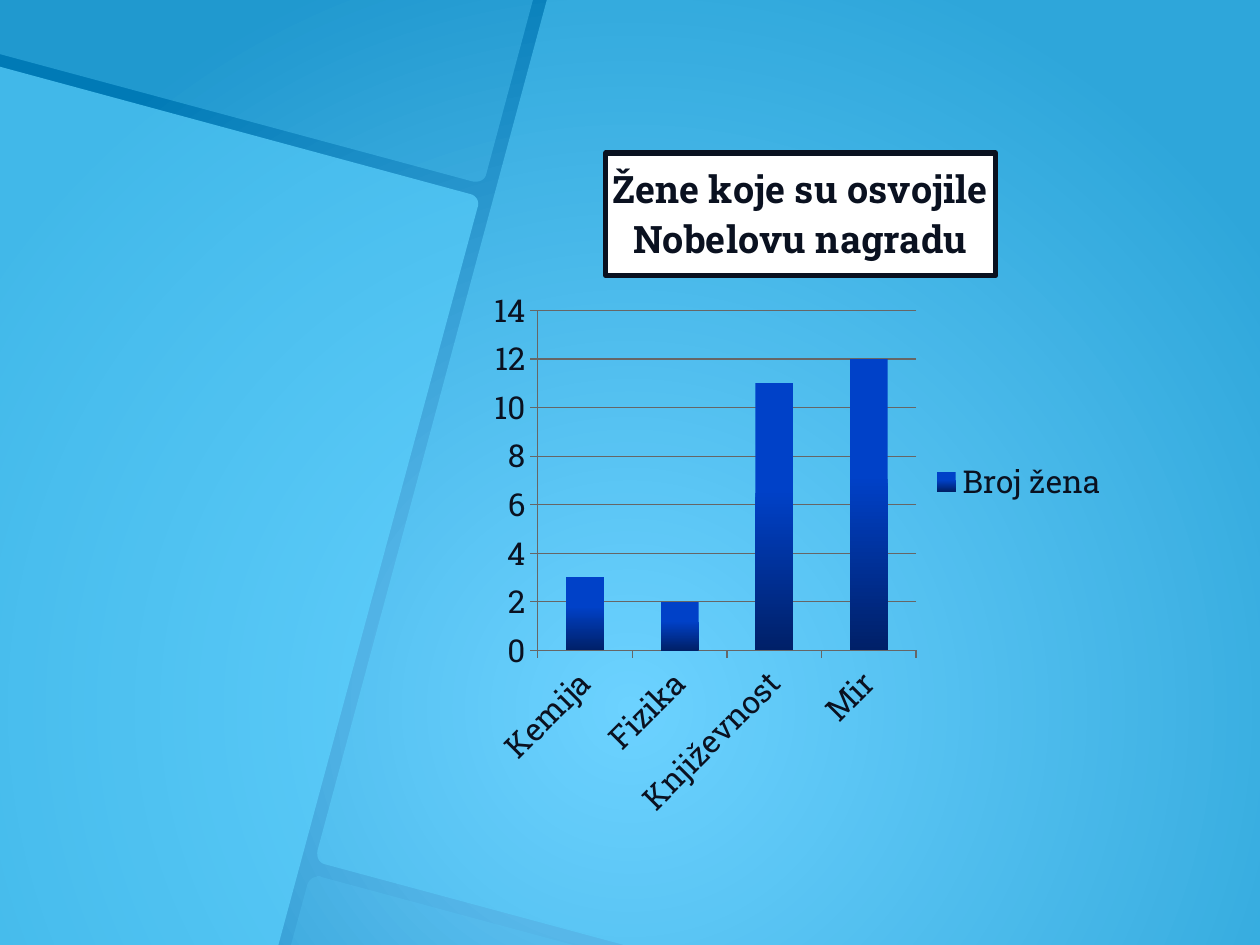
from dataclasses import dataclass
from typing import Any

from lxml.etree import SubElement
from pptx import Presentation
from pptx.chart.data import CategoryChartData
from pptx.dml.color import RGBColor
from pptx.enum.chart import XL_CHART_TYPE, XL_LEGEND_POSITION, XL_TICK_MARK
from pptx.oxml import parse_xml
from pptx.oxml.ns import nsdecls, qn
from pptx.util import Inches, Pt

WIDTH, HEIGHT = 10, 7.5
CURVE_STEPS = 8
FONT = "Roboto Slab"
INK = RGBColor(0x0A, 0x11, 0x20)
WHITE = RGBColor(0xFF, 0xFF, 0xFF)
GREY = RGBColor(0x66, 0x66, 0x66)
PANEL = RGBColor(0x5D, 0xD3, 0xFF)
GLOW = RGBColor(0x7C, 0xD1, 0xFF)
DEEP = RGBColor(0x00, 0x7A, 0xB6)
BAR_TOP = RGBColor(0x00, 0x41, 0xC8)
BAR_FOOT = RGBColor(0x00, 0x20, 0x68)

Point = tuple[float, float]


@dataclass(frozen=True)
class Tile:
    opacity: int
    segments: tuple[tuple[Point, ...], ...]


TILES = (
    Tile(70, (((0, 0.53),), ((3.73, 1.54),),
              ((3.78, 1.55), (3.81, 1.6), (3.79, 1.65)),
              ((2.21, HEIGHT),), ((0, HEIGHT),))),
    Tile(35, (((0, 0),), ((4.23, 0),), ((3.86, 1.38),),
              ((3.85, 1.43), (3.8, 1.45), (3.75, 1.44)), ((0, 0.43),))),
    Tile(20, (((2.51, 6.96),), ((2.52, 6.95), (2.54, 6.95), (2.55, 6.96)),
              ((4.55, HEIGHT),), ((2.31, HEIGHT),), ((2.44, 7.02),),
              ((2.45, 6.99), (2.48, 6.96), (2.51, 6.96)))),
    Tile(50, (((4.34, 0),), ((WIDTH, 0),), ((WIDTH, HEIGHT),),
              ((4.95, HEIGHT),), ((2.58, 6.86),),
              ((2.53, 6.85), (2.51, 6.8), (2.52, 6.75)))),
)


def set_values(target: Any, values: dict[str, Any]) -> None:
    for name, value in values.items():
        setattr(target, name, value)


def bezier(points: tuple[Point, ...], share: float) -> Point:
    rest = 1 - share
    weights = (rest**3, 3 * rest**2 * share, 3 * rest * share**2, share**3)
    return (sum(w * p[0] for w, p in zip(weights, points)),
            sum(w * p[1] for w, p in zip(weights, points)))


def outline(tile: Tile) -> list[Point]:
    points: list[Point] = []
    for segment in tile.segments:
        if len(segment) == 1:
            points.append(segment[0])
        else:
            corner = (points[-1], *segment)
            points.extend(bezier(corner, step / CURVE_STEPS)
                          for step in range(1, CURVE_STEPS + 1))
    return points


def draw_tile(slide: Any, tile: Tile) -> None:
    points = [(Inches(x), Inches(y)) for x, y in outline(tile)]
    builder = slide.shapes.build_freeform(*points[0], scale=1.0)
    builder.add_line_segments(points[1:], close=True)
    shape = builder.convert_to_shape()
    shape.shadow.inherit = False
    shape.line.fill.background()
    shape.fill.solid()
    shape.fill.fore_color.rgb = PANEL
    color = shape.fill._xPr.find(".//" + qn("a:srgbClr"))
    SubElement(color, qn("a:alpha"), val=str(tile.opacity * 1000))


def set_stops(fill: Any, first: RGBColor, last: RGBColor, start: float = 0) -> None:
    fill.gradient()
    for stop, color, position in zip(fill.gradient_stops, (first, last), (start, 1)):
        stop.color.rgb = color
        stop.position = position


def draw_background(slide: Any) -> None:
    fill = slide.background.fill
    set_stops(fill, GLOW, DEEP)
    linear = slide.element.find(".//" + qn("a:lin"))
    linear.getparent().replace(linear, parse_xml(
        f'<a:path {nsdecls("a")} path="circle">'
        '<a:fillToRect l="50000" t="50000" r="50000"/></a:path>'))


def format_axis(axis: Any) -> None:
    set_values(axis, {"major_tick_mark": XL_TICK_MARK.OUTSIDE,
                      "minor_tick_mark": XL_TICK_MARK.NONE})
    set_values(axis.format.line, {"width": Pt(0.75)})
    axis.format.line.color.rgb = GREY


def format_title(chart: Any, text: str) -> None:
    title = chart.chart_title
    title.text_frame.text = text
    font = title.text_frame.paragraphs[0].runs[0].font
    set_values(font, {"name": FONT, "size": Pt(21.6), "bold": True})
    font.color.rgb = INK
    title.format.fill.solid()
    title.format.fill.fore_color.rgb = WHITE
    title.format.line.width = Pt(3)
    title.format.line.color.rgb = INK


def place_plot(chart: Any, shares: dict[str, float]) -> None:
    plot_area = chart._chartSpace.chart.plotArea
    for old in plot_area.findall(qn("c:layout")):
        plot_area.remove(old)
    lengths = "".join(f'<c:{name} val="{share}"/>' for name, share in shares.items())
    plot_area.insert(0, parse_xml(
        f'<c:layout {nsdecls("c")}><c:manualLayout><c:layoutTarget val="inner"/>'
        f'<c:xMode val="edge"/><c:yMode val="edge"/>{lengths}'
        '</c:manualLayout></c:layout>'))
    clear = f'<c:spPr {nsdecls("c", "a")}><a:noFill/><a:ln><a:noFill/></a:ln></c:spPr>'
    plot_area.append(parse_xml(clear))
    chart._chartSpace.chart.addnext(parse_xml(clear))


def draw_chart(slide: Any) -> None:
    data = CategoryChartData()
    data.categories = ["Kemija", "Fizika", "Književnost", "Mir"]
    data.add_series("Broj žena", (3, 2, 11, 12))
    chart = slide.shapes.add_chart(
        XL_CHART_TYPE.COLUMN_CLUSTERED, Inches(3.81), Inches(1.05),
        Inches(5.09), Inches(5.55), data).chart
    set_values(chart.font, {"name": FONT, "size": Pt(18)})
    chart.font.color.rgb = INK
    set_values(chart, {"has_title": True, "has_legend": True})
    set_values(chart.legend, {"position": XL_LEGEND_POSITION.RIGHT,
                              "include_in_layout": False})
    format_title(chart, "Žene koje su osvojile Nobelovu nagradu")
    format_axis(chart.category_axis)
    format_axis(chart.value_axis)
    set_values(chart.value_axis, {"minimum_scale": 0, "maximum_scale": 14,
                                  "major_unit": 2, "has_major_gridlines": True})
    gridlines = chart.value_axis.major_gridlines.format.line
    gridlines.width = Pt(0.75)
    gridlines.color.rgb = GREY
    labels = chart.category_axis.tick_labels
    labels.font.size = Pt(18)
    body = chart.category_axis._element.find(".//" + qn("a:bodyPr"))
    body.set("rot", str(-45 * 60000))
    plot = chart.plots[0]
    set_values(plot, {"gap_width": 150, "vary_by_categories": False})
    fill = plot.series[0].format.fill
    set_stops(fill, BAR_TOP, BAR_FOOT, 0.4)
    fill.gradient_angle = 270
    place_plot(chart, {"x": 0.09, "y": 0.255, "w": 0.59, "h": 0.486})


def main() -> None:
    presentation = Presentation()
    set_values(presentation, {"slide_width": Inches(WIDTH),
                              "slide_height": Inches(HEIGHT)})
    slide = presentation.slides.add_slide(presentation.slide_layouts[6])
    draw_background(slide)
    for tile in TILES:
        draw_tile(slide, tile)
    draw_chart(slide)
    presentation.save("out.pptx")


if __name__ == "__main__":
    main()
